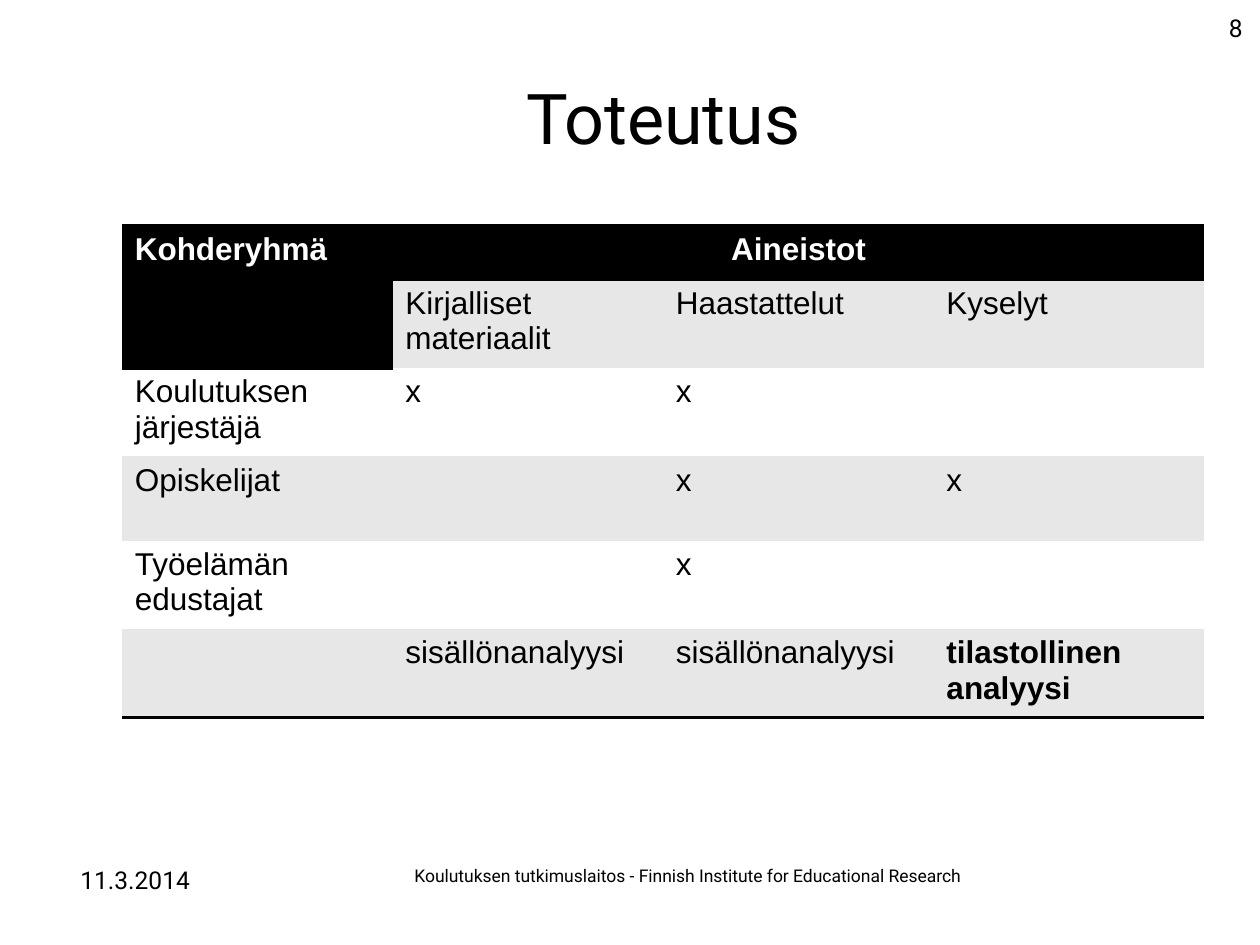
from pptx import Presentation
from pptx.dml.color import RGBColor as RGB
from pptx.enum.text import MSO_ANCHOR as Anchor, PP_ALIGN as Align
from pptx.oxml import parse_xml
from pptx.oxml.ns import nsdecls, qn
from pptx.util import Inches, Pt

LABELS = [
    ("Toteutus", "title", (0.97, 0.3, 8.59, 1.25), Align.CENTER, Anchor.MIDDLE),
    ("11.3.2014", "small", (0.54, 6.82, 2.33, 0.36), Align.LEFT, Anchor.TOP),
    ("Koulutuksen tutkimuslaitos - Finnish Institute for Educational Research",
     "foot", (3.19, 6.82, 4.65, 0.36), Align.LEFT, Anchor.TOP),
    ("8", "small", (9.52, 0.05, 0.44, 0.39), Align.RIGHT, Anchor.TOP),
]
ROWS = [
    ("Kohderyhmä", "Aineistot", "", ""),
    ("", "Kirjalliset materiaalit", "Haastattelut", "Kyselyt"),
    ("Koulutuksen järjestäjä", "x", "x", ""),
    ("Opiskelijat", "", "x", "x"),
    ("Työelämän edustajat", "", "x", ""),
    ("", "sisällönanalyysi", "sisällönanalyysi", "tilastollinen analyysi"),
]
BOLD = {"Kohderyhmä", "Aineistot", "tilastollinen analyysi"}
HEADS = {(0, 0), (0, 1), (0, 2), (0, 3), (1, 0)}
HIGH = [0.43] + [0.66] * 2 + [0.67] + [0.66] * 2
LEFT, TOP, WIDE = 0.97, 1.79, 8.59

BLACK, WHITE, GREY = "000000", "FFFFFF", "E7E7E7"
THEME = {
    "title": dict(name="Roboto", size=Pt(40), bold=False),
    "small": dict(name="Roboto", size=Pt(14), bold=False),
    "foot": dict(name="Roboto", size=Pt(10), bold=False),
    "cell": dict(name="Arial", size=Pt(18), bold=False),
    "strong": dict(name="Arial", size=Pt(18), bold=True),
    "rule": Pt(2),
    "plain": "{2D5ABB26-0587-4C30-8999-92F81FD0307C}",
}


def write(frame, text, kind, color=BLACK, align=Align.LEFT):
    para = frame.paragraphs[0]
    para.alignment = align
    run = para.add_run()
    run.text = text
    for key, val in THEME[kind].items():
        setattr(run.font, key, val)
    run.font.color.rgb = RGB.from_string(color)


def edge(cell, side):
    line = parse_xml(
        f'<a:{side} {nsdecls("a")} w="{THEME["rule"]}"><a:solidFill>'
        f'<a:srgbClr val="{BLACK}"/></a:solidFill></a:{side}>')
    props = cell._tc.get_or_add_tcPr()
    props.insert(len(props.findall(qn("a:lnT"))), line)


def label(slide, text, kind, box, align, anchor):
    frame = slide.shapes.add_textbox(*map(Inches, box)).text_frame
    frame.word_wrap = True
    frame.vertical_anchor = anchor
    write(frame, text, kind, align=align)


def grid(slide):
    last, count = len(ROWS) - 1, len(ROWS[0])
    box = map(Inches, (LEFT, TOP, WIDE, sum(HIGH)))
    table = slide.shapes.add_table(len(ROWS), count, *box).table
    table.first_row = table.horz_banding = False
    table._tbl.tblPr.find(qn("a:tableStyleId")).text = THEME["plain"]
    for col in table.columns:
        col.width = Inches(WIDE / count)
    for r, texts in enumerate(ROWS):
        table.rows[r].height = Inches(HIGH[r])
        for c, text in enumerate(texts):
            cell = table.cell(r, c)
            head = (r, c) in HEADS
            fill = BLACK if head else GREY if r % 2 else WHITE
            cell.fill.solid()
            cell.fill.fore_color.rgb = RGB.from_string(fill)
            if r == 0:
                edge(cell, "lnT")
            if head or r == last:
                edge(cell, "lnB")
            if text:
                write(cell.text_frame, text,
                      "strong" if text in BOLD else "cell",
                      WHITE if head else BLACK,
                      Align.CENTER if (r, c) == (0, 1) else Align.LEFT)
            else:
                cell.text_frame.paragraphs[0].font.size = THEME["cell"]["size"]
    table.cell(0, 0).merge(table.cell(1, 0))
    table.cell(0, 1).merge(table.cell(0, count - 1))


def main():
    deck = Presentation()
    deck.slide_width, deck.slide_height = Inches(10), Inches(7.5)
    slide = deck.slides.add_slide(deck.slide_layouts[6])
    for item in LABELS:
        label(slide, *item)
    grid(slide)
    deck.save("out.pptx")


if __name__ == "__main__":
    main()
